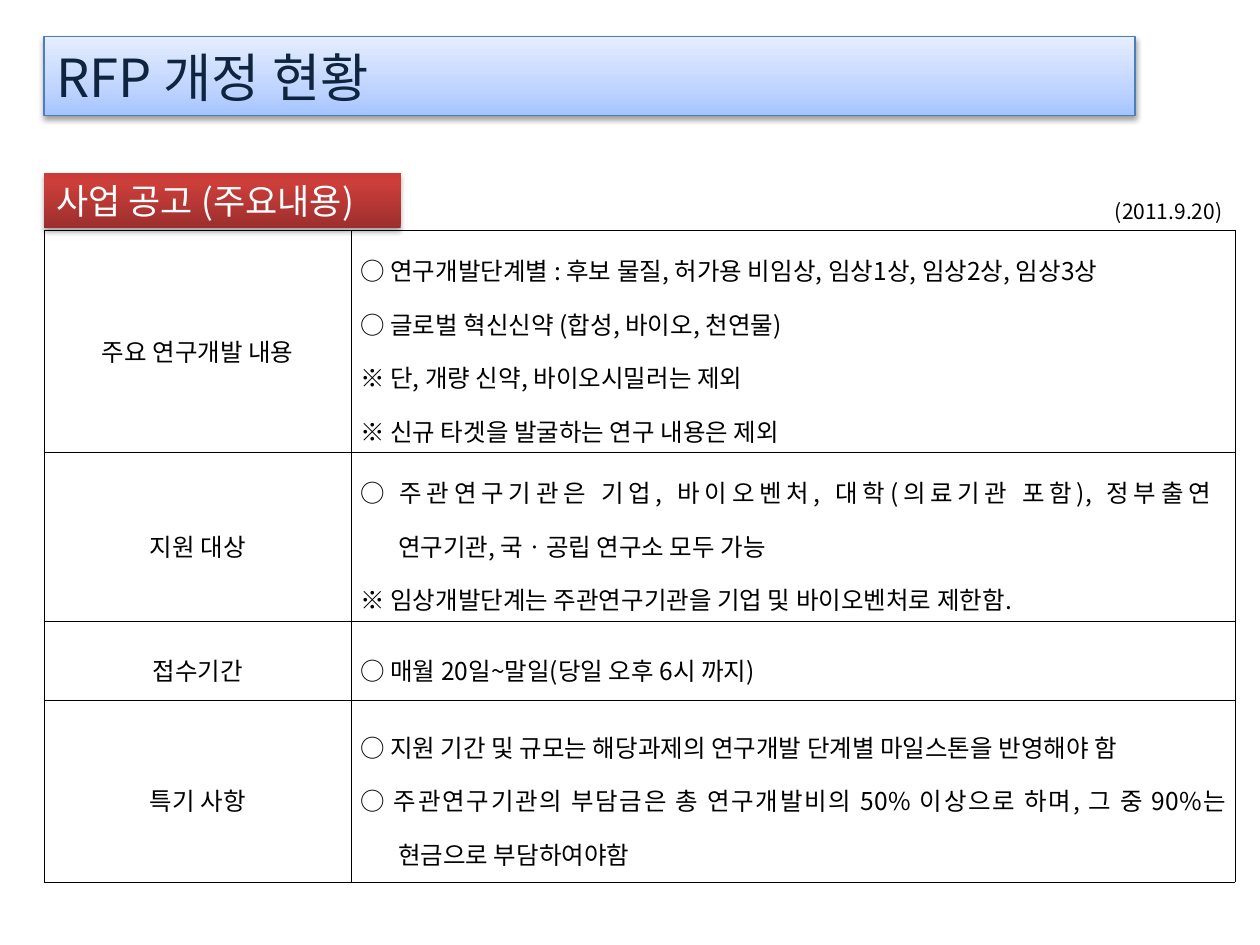
from copy import deepcopy

from lxml.etree import SubElement
from pptx import Presentation
from pptx.dml.color import RGBColor
from pptx.enum.shapes import MSO_SHAPE
from pptx.enum.text import MSO_ANCHOR, PP_ALIGN
from pptx.oxml import parse_xml
from pptx.oxml.ns import nsdecls, qn
from pptx.util import Inches, Pt

FONT = "Noto Sans CJK KR"
BLACK = RGBColor(0x00, 0x00, 0x00)
WHITE = RGBColor(0xFF, 0xFF, 0xFF)
NAVY = RGBColor(0x0F, 0x24, 0x3E)
BLUE = RGBColor(0x4B, 0x7E, 0xBC)
# Gradient stops from bottom to top: percent, colour
BLUE_STOPS = [
    (0, RGBColor(0xA4, 0xC4, 0xFF)),
    (35, RGBColor(0xBF, 0xD4, 0xFF)),
    (100, RGBColor(0xE6, 0xEE, 0xFF)),
]
RED_STOPS = [
    (0, RGBColor(0x9C, 0x2F, 0x2D)),
    (80, RGBColor(0xCB, 0x3E, 0x3A)),
    (100, RGBColor(0xCE, 0x3B, 0x37)),
]

TITLE = "RFP 개정 현황"
SECTION = "사업 공고 (주요내용)"
DATE = "(2011.9.20)"
# Row height, heading, lines as (text, has hanging indent)
ROWS = [
    (1.76, "주요 연구개발 내용", [
        ("○ 연구개발단계별 : 후보 물질, 허가용 비임상, 임상1상, 임상2상, 임상3상", False),
        ("○ 글로벌 혁신신약 (합성, 바이오, 천연물)", False),
        ("※ 단, 개량 신약, 바이오시밀러는 제외", False),
        ("※ 신규 타겟을 발굴하는 연구 내용은 제외", False),
    ]),
    (1.34, "지원 대상", [
        ("○ 주관연구기관은 기업, 바이오벤처, 대학(의료기관 포함), 정부출연 \n"
         "연구기관, 국ㆍ공립 연구소 모두 가능", True),
        ("※ 임상개발단계는 주관연구기관을 기업 및 바이오벤처로 제한함.", False),
    ]),
    (0.63, "접수기간", [("○ 매월 20일~말일(당일 오후 6시 까지)", False)]),
    (1.44, "특기 사항", [
        ("○ 지원 기간 및 규모는 해당과제의 연구개발 단계별 마일스톤을 반영해야 함", False),
        ("○ 주관연구기관의 부담금은 총 연구개발비의 50% 이상으로 하며, "
         "그 중 90%는 현금으로 부담하여야함", True),
    ]),
]
COLUMNS = [2.44, 7.01]
LEFT = 0.35
TABLE_TOP = 1.83
HANGING = 0.3


def write(paragraph, text, size, color, **layout):
    paragraph.text = text
    for name, value in layout.items():
        setattr(paragraph, name, value)
    for run in paragraph.runs:
        run.font.name = FONT
        run.font.size = Pt(size)
        run.font.color.rgb = color
        properties = run.font._element
        SubElement(properties, qn("a:ea")).set("typeface", FONT)
        for line_break in paragraph._p.findall(qn("a:br")):
            if len(line_break) == 0:
                line_break.append(deepcopy(properties))


def add_banner(slide, box, stops, opacity, text, size, color):
    """Add a rectangle with a vertical gradient and a soft shadow below it."""
    shape = slide.shapes.add_shape(MSO_SHAPE.RECTANGLE, *map(Inches, box))
    shape.fill.gradient()
    shape.fill.gradient_angle = 90
    stop_list = shape._element.spPr.find(".//" + qn("a:gsLst"))
    for stop in list(stop_list):
        stop_list.remove(stop)
    for percent, stop_color in stops:
        stop = SubElement(stop_list, qn("a:gs"), pos=str(percent * 1000))
        SubElement(stop, qn("a:srgbClr"), val=str(stop_color))
    shape.line.fill.background()
    shape._element.spPr.append(parse_xml(
        f'<a:effectLst {nsdecls("a")}><a:outerShdw blurRad="{Pt(3.1)}" '
        f'dist="{Pt(1.7)}" dir="5400000" rotWithShape="0"><a:srgbClr val="{BLACK}">'
        f'<a:alpha val="{opacity * 1000}"/></a:srgbClr></a:outerShdw></a:effectLst>'))
    shape.text_frame.vertical_anchor = MSO_ANCHOR.MIDDLE
    write(shape.text_frame.paragraphs[0], text, size, color, alignment=PP_ALIGN.LEFT)
    return shape


def format_cell(cell):
    settings = {
        "vertical_anchor": MSO_ANCHOR.MIDDLE,
        "margin_left": Inches(0.07), "margin_right": Inches(0.07),
        "margin_top": Inches(0.02), "margin_bottom": Inches(0.02),
    }
    for name, value in settings.items():
        setattr(cell, name, value)
    properties = cell._tc.get_or_add_tcPr()
    for side in ("lnL", "lnR", "lnT", "lnB"):
        properties.append(parse_xml(
            f'<a:{side} {nsdecls("a")} w="{Pt(0.28)}"><a:solidFill>'
            f'<a:srgbClr val="{BLACK}"/></a:solidFill></a:{side}>'))
    cell.fill.background()


def add_details(slide):
    box = (LEFT, TABLE_TOP, sum(COLUMNS), sum(row[0] for row in ROWS))
    table = slide.shapes.add_table(len(ROWS), len(COLUMNS), *map(Inches, box)).table
    table.first_row = table.horz_banding = False
    for column, width in zip(table.columns, COLUMNS):
        column.width = Inches(width)
    for row, (height, heading, lines) in zip(table.rows, ROWS):
        row.height = Inches(height)
        heading_cell, lines_cell = row.cells
        format_cell(heading_cell)
        format_cell(lines_cell)
        write(heading_cell.text_frame.paragraphs[0], heading, 14, BLACK,
              alignment=PP_ALIGN.CENTER, line_spacing=1.5)
        frame = lines_cell.text_frame
        for index, (text, hanging) in enumerate(lines):
            paragraph = frame.add_paragraph() if index else frame.paragraphs[0]
            write(paragraph, text, 14, BLACK, alignment=PP_ALIGN.JUSTIFY, line_spacing=1.5)
            if hanging:
                properties = paragraph._p.get_or_add_pPr()
                properties.set("marL", str(Inches(HANGING)))
                properties.set("indent", str(-Inches(HANGING)))


def main():
    presentation = Presentation()
    presentation.slide_width, presentation.slide_height = Inches(10), Inches(7.5)
    slide = presentation.slides.add_slide(presentation.slide_layouts[6])

    add_details(slide)
    date_box = slide.shapes.add_textbox(*map(Inches, (8.23, 1.53, 1.57, 0.3)))
    date_box.text_frame.word_wrap = True
    write(date_box.text_frame.paragraphs[0], DATE, 12, BLACK, alignment=PP_ALIGN.RIGHT)
    add_banner(slide, (LEFT, 1.37, 2.83, 0.44), RED_STOPS, 35, SECTION, 20, WHITE)
    title = add_banner(slide, (LEFT, 0.29, 8.66, 0.63), BLUE_STOPS, 38, TITLE, 30, NAVY)
    title.line.color.rgb = BLUE
    title.line.width = Pt(0.75)

    presentation.save("out.pptx")


if __name__ == "__main__":
    main()
